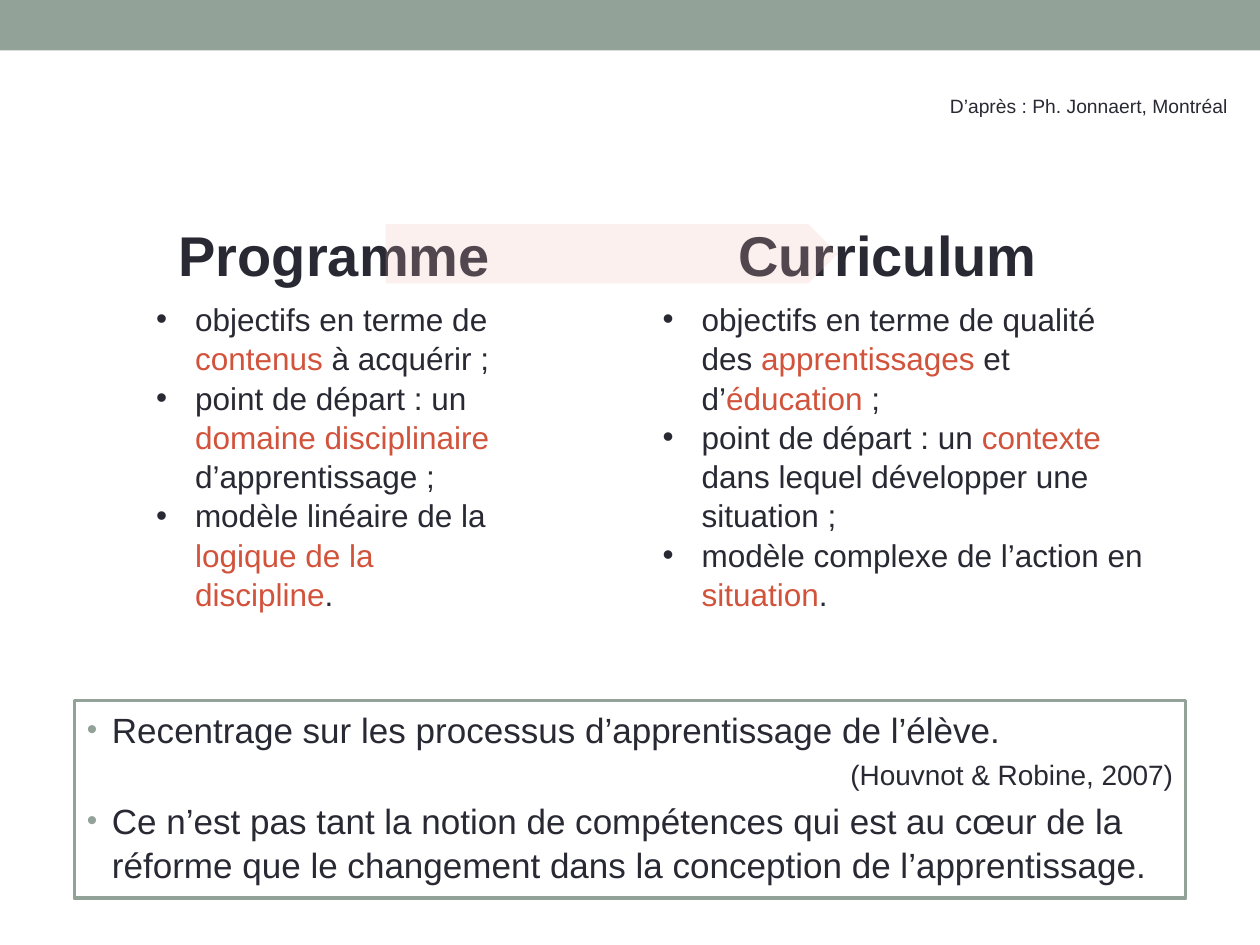
from dataclasses import dataclass

from lxml import etree
from pptx import Presentation, util as u
from pptx.dml.color import RGBColor
from pptx.enum import shapes, text
from pptx.oxml import ns

COLORS = {
    "sage": "93A299",
    "ink": "292934",
    "accent": "D2533C",
    "blush": "EDBAB1",
    "paper": "FFFFFF",
}
FONT = "Arial"
LINE_SPACING = 1.04


@dataclass
class Bullet:
    indent: float
    color: str
    percent: int = 100


@dataclass
class Line:
    """One paragraph; wording between asterisks takes the accent colour."""
    wording: str
    size: int
    align: text.PP_ALIGN = text.PP_ALIGN.LEFT
    bold: bool = False
    bullet: Bullet | None = None
    space_before: float = 0


@dataclass
class Column:
    title: str
    title_left: float
    points_left: float
    points_width: float
    points: list[str]


COLUMN_BULLET = Bullet(0.31, "ink")
SUMMARY_BULLET = Bullet(0.2, "sage", 85)

COLUMNS = [
    Column("Programme", 1.24, 1.14, 3.03, [
        "objectifs en terme de *contenus* à acquérir ;",
        "point de départ : un *domaine disciplinaire *d’apprentissage ;",
        "modèle linéaire de la *logique de la discipline*.",
    ]),
    Column("Curriculum", 5.63, 5.16, 4.02, [
        "objectifs en terme de qualité des *apprentissages* et d’*éducation* ;",
        "point de départ : un *contexte* dans lequel développer une situation ;",
        "modèle complexe de l’action en *situation*.",
    ]),
]

SUMMARY = [
    Line("Recentrage sur les processus d’apprentissage de l’élève.", 20,
         bullet=SUMMARY_BULLET, space_before=4),
    Line("(Houvnot & Robine, 2007)", 16, text.PP_ALIGN.RIGHT, space_before=3.2),
    Line("Ce n’est pas tant la notion de compétences qui est au cœur de la réforme "
         "que le changement dans la conception de l’apprentissage.", 20,
         bullet=SUMMARY_BULLET, space_before=4),
]


def rgb(name: str) -> RGBColor:
    return RGBColor.from_string(COLORS[name])


def add_bullet(paragraph, bullet: Bullet) -> None:
    props = paragraph._p.get_or_add_pPr()
    indent = u.Inches(bullet.indent)
    props.set("marL", str(indent))
    props.set("indent", str(-indent))
    color = etree.SubElement(props, ns.qn("a:buClr"))
    etree.SubElement(color, ns.qn("a:srgbClr"), val=COLORS[bullet.color])
    etree.SubElement(props, ns.qn("a:buSzPct"), val=str(bullet.percent * 1000))
    etree.SubElement(props, ns.qn("a:buFont"), typeface=FONT)
    etree.SubElement(props, ns.qn("a:buChar"), char="•")


def write_lines(frame, lines: list[Line]) -> None:
    for index, line in enumerate(lines):
        paragraph = frame.add_paragraph() if index else frame.paragraphs[0]
        paragraph.alignment = line.align
        paragraph.line_spacing = LINE_SPACING
        paragraph.space_before = u.Pt(line.space_before)
        if line.bullet:
            add_bullet(paragraph, line.bullet)
        paragraph.font.name = FONT
        paragraph.font.size = u.Pt(line.size)
        paragraph.font.bold = line.bold
        paragraph.font.color.rgb = rgb("ink")
        for part, wording in enumerate(line.wording.split("*")):
            run = paragraph.add_run()
            run.text = wording
            if part % 2:
                run.font.color.rgb = rgb("accent")


def add_text(slide, left: float, top: float, width: float, height: float,
             lines: list[Line], wrap: bool = True) -> None:
    box = slide.shapes.add_textbox(*map(u.Inches, (left, top, width, height)))
    box.text_frame.word_wrap = wrap
    write_lines(box.text_frame, lines)


def add_block(slide, preset: shapes.MSO_SHAPE, left: float, top: float,
              width: float, height: float, fill: str):
    """Add a flat, borderless preset shape."""
    block = slide.shapes.add_shape(preset, *map(u.Inches, (left, top, width, height)))
    block.shadow.inherit = False
    block.fill.solid()
    block.fill.fore_color.rgb = rgb(fill)
    block.line.fill.background()
    return block


def set_opacity(block, percent: int) -> None:
    color = block._element.spPr.find(".//" + ns.qn("a:srgbClr"))
    etree.SubElement(color, ns.qn("a:alpha"), val=str(percent * 1000))


def add_column(slide, column: Column) -> None:
    add_text(slide, column.title_left, 1.68, 2.83, 0.64,
             [Line(column.title, 32, text.PP_ALIGN.CENTER, bold=True)])
    add_text(slide, column.points_left, 2.32, column.points_width, 2.52,
             [Line(point, 18, bullet=COLUMN_BULLET) for point in column.points])


def add_summary(slide) -> None:
    panel = add_block(slide, shapes.MSO_SHAPE.RECTANGLE, 0.59, 5.56, 8.82, 1.57, "paper")
    panel.line.color.rgb = rgb("sage")
    panel.line.width = u.Pt(2.08)
    panel.text_frame.word_wrap = True
    panel.text_frame.vertical_anchor = text.MSO_ANCHOR.TOP
    write_lines(panel.text_frame, SUMMARY)


def main() -> None:
    deck = Presentation()
    deck.slide_width, deck.slide_height = u.Inches(10), u.Inches(7.5)
    slide = deck.slides.add_slide(deck.slide_layouts[6])

    add_block(slide, shapes.MSO_SHAPE.RECTANGLE, 0, 0, 10, 0.4, "sage")
    for column in COLUMNS:
        add_column(slide, column)
    transition = add_block(slide, shapes.MSO_SHAPE.PENTAGON, 3.06, 1.78, 3.59, 0.47, "blush")
    set_opacity(transition, 21)
    add_text(slide, 7.44, 0.69, 2.42, 0.29,
             [Line("D’après : Ph. Jonnaert, Montréal", 11)], wrap=False)
    add_summary(slide)

    deck.save("out.pptx")


if __name__ == "__main__":
    main()
